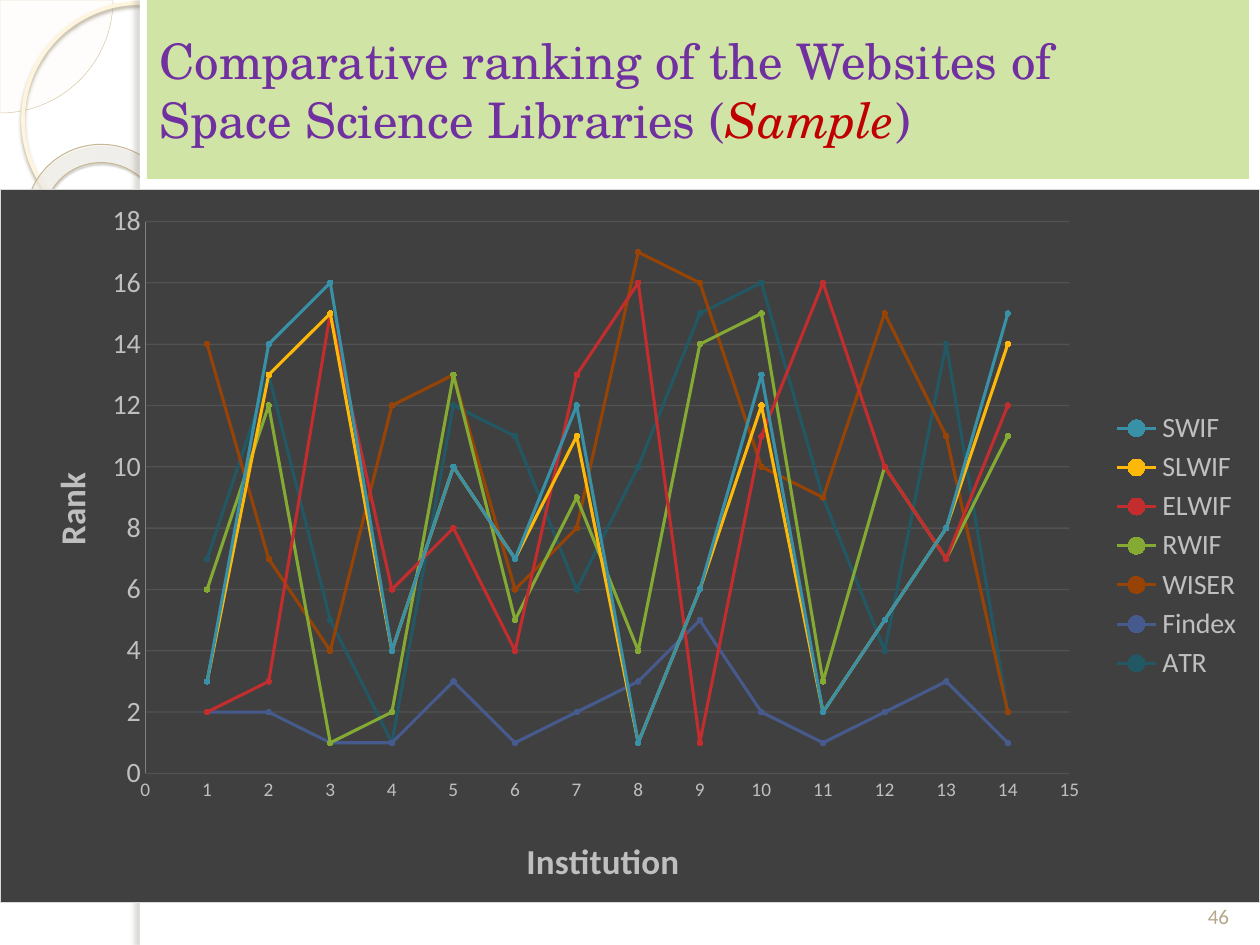
from lxml.etree import SubElement
from pptx import Presentation
from pptx.chart.data import XyChartData
from pptx.dml.color import RGBColor
from pptx.enum.chart import XL_CHART_TYPE, XL_LEGEND_POSITION, XL_MARKER_STYLE, XL_TICK_MARK
from pptx.enum.shapes import MSO_SHAPE
from pptx.enum.text import MSO_ANCHOR, PP_ALIGN
from pptx.oxml import parse_xml
from pptx.oxml.ns import nsdecls, qn
from pptx.util import Pt

EMU_PER_PX = 914400 / 126
CHART_BOX = (0, 189, 1260, 714)
GREY = "BFBFBF"

# name, line colour, marker colour, rank of institutions 1 to 14
RANKINGS = [
    ("SWIF", "3891A7", "7EC3D4", (3, 14, 16, 4, 10, 7, 12, 1, 6, 13, 2, 5, 8, 15)),
    ("SLWIF", "FEB80A", "FED46C", (3, 13, 15, 4, 10, 7, 11, 1, 6, 12, 2, 5, 8, 14)),
    ("ELWIF", "C32D2E", "E17B7C", (2, 3, 15, 6, 8, 4, 13, 16, 1, 11, 16, 10, 7, 12)),
    ("RWIF", "84AA33", "B9D77A", (6, 12, 1, 2, 13, 5, 9, 4, 14, 15, 3, 10, 7, 11)),
    ("WISER", "964305", "F88631", (14, 7, 4, 12, 13, 6, 8, 17, 16, 10, 9, 15, 11, 2)),
    ("Findex", "475A8D", "8898C3", (2, 2, 1, 1, 3, 1, 2, 3, 5, 2, 1, 2, 3, 1)),
    ("ATR", "225764", "56B0C6", (7, 13, 5, 1, 12, 11, 6, 10, 15, 16, 9, 4, 14, 2)),
]


def px(length):
    return round(length * EMU_PER_PX)


def rgb(value):
    return RGBColor.from_string(value)


def set_alpha(color_format_parent, percent):
    for color in color_format_parent.iter(qn("a:srgbClr")):
        SubElement(color, qn("a:alpha")).set("val", str(percent * 1000))


def style_line(line, color, width):
    line.color.rgb = rgb(color)
    line.width = Pt(width)


def style_font(font, size, color, name="Calibri", bold=False):
    font.size = Pt(size)
    font.name = name
    font.bold = bold
    font.color.rgb = rgb(color)


def add_shape(slide, kind, box, fill=None, line=None):
    shape = slide.shapes.add_shape(kind, *map(px, box))
    shape.shadow.inherit = False
    if fill:
        shape.fill.solid()
        shape.fill.fore_color.rgb = rgb(fill)
    else:
        shape.fill.background()
    if line:
        style_line(shape.line, *line)
    else:
        shape.line.fill.background()
    return shape


def add_shadow(shape, color, alpha, blur, distance, angle):
    effects = shape._element.spPr.find(qn("a:effectLst"))
    effects.append(parse_xml(
        f'<a:outerShdw {nsdecls("a")} blurRad="{Pt(blur)}" dist="{Pt(distance)}" '
        f'dir="{angle * 60000}" algn="tl" rotWithShape="0"><a:srgbClr val="{color}">'
        f'<a:alpha val="{alpha * 1000}"/></a:srgbClr></a:outerShdw>'))


def set_circular_gradient(shape, stops):
    shape.fill.background()
    stop_xml = "".join(
        f'<a:gs pos="{position * 1000}"><a:srgbClr val="{color}">'
        f'<a:alpha val="{alpha * 1000}"/></a:srgbClr></a:gs>'
        for position, color, alpha in stops)
    no_fill = shape._element.spPr.find(qn("a:noFill"))
    no_fill.addprevious(parse_xml(
        f'<a:gradFill {nsdecls("a")} rotWithShape="1"><a:gsLst>{stop_xml}</a:gsLst>'
        '<a:path path="circle"><a:fillToRect l="-408000" t="-50000" r="508000" b="150000"/>'
        '</a:path></a:gradFill>'))
    shape._element.spPr.remove(no_fill)


def add_decoration(slide):
    pie = add_shape(slide, MSO_SHAPE.PIE, (-113, -113, 226, 226), "FEFAF4", ("D3C39F", 0.25))
    pie.adjustments[0] = 0
    pie.adjustments[1] = 54
    set_alpha(pie._element.spPr.find(qn("a:solidFill")), 33)

    ring = add_shape(slide, MSO_SHAPE.OVAL, (23, 3, 234, 234), line=("FFF5DE", 2.15))
    add_shadow(ring, "B0A68F", 85, 2, 2, 90)

    donut = add_shape(slide, MSO_SHAPE.DONUT, (25, 145, 155, 152), line=("C7B893", 0.58))
    donut.adjustments[0] = 0.12
    donut.rotation = 38.6
    set_circular_gradient(donut, [(0, "FFFCF6", 70), (70, "FFFEFB", 55), (100, "F0D28E", 60)])
    add_shadow(donut, "5A5444", 35, 1, 1.2, 75)

    add_shape(slide, MSO_SHAPE.RECTANGLE, (140, 0, 1120, 945), "FFFFFF")
    edge = add_shape(slide, MSO_SHAPE.RECTANGLE, (140, 0, 10, 945), "FFFFFF")
    add_shadow(edge, "736F63", 25, 3, 3, 180)


def add_title(slide):
    title = add_shape(slide, MSO_SHAPE.RECTANGLE, (147, 0, 1102, 179), "D0E4A6")
    title.text_frame.word_wrap = True
    title.text_frame.vertical_anchor = MSO_ANCHOR.MIDDLE
    paragraph = title.text_frame.paragraphs[0]
    paragraph.alignment = PP_ALIGN.LEFT
    paragraph.text = "Comparative ranking of the Websites of\vSpace Science Libraries ("
    sample = paragraph.add_run()
    sample.text = "Sample"
    paragraph.add_run().text = ")"
    style_font(paragraph.font, 28, "7030A0", "TeX Gyre Schola")
    sample.font.italic = True
    sample.font.color.rgb = rgb("C00000")


def add_page_number(slide):
    box = slide.shapes.add_textbox(*map(px, (1187, 869, 63, 66)))
    box.text_frame.word_wrap = True
    box.text_frame.vertical_anchor = MSO_ANCHOR.BOTTOM
    paragraph = box.text_frame.paragraphs[0]
    paragraph.text = "46"
    paragraph.alignment = PP_ALIGN.CENTER
    style_font(paragraph.font, 12, "B5A788")


def set_layout(element, index, left, top, width=None, height=None):
    """Place a chart part, given in slide px, as fractions of the chart."""
    for old in element.findall(qn("c:layout")):
        element.remove(old)
    layout = parse_xml(f'<c:layout {nsdecls("c")}><c:manualLayout/></c:layout>')
    settings = [("xMode", "edge"), ("yMode", "edge"),
                ("x", (left - CHART_BOX[0]) / CHART_BOX[2]),
                ("y", (top - CHART_BOX[1]) / CHART_BOX[3])]
    if width:
        settings += [("w", width / CHART_BOX[2]), ("h", height / CHART_BOX[3])]
        if element.tag == qn("c:plotArea"):
            settings.insert(0, ("layoutTarget", "inner"))
    for name, value in settings:
        SubElement(layout[0], qn(f"c:{name}")).set("val", str(value))
    element.insert(index, layout)


def style_axis(axis, title, title_place, maximum, step, size):
    axis.minimum_scale = 0
    axis.maximum_scale = maximum
    axis.major_unit = step
    axis.major_tick_mark = axis.minor_tick_mark = XL_TICK_MARK.NONE
    style_font(axis.tick_labels.font, size, GREY)
    paragraph = axis.axis_title.text_frame.paragraphs[0]
    paragraph.text = title
    style_font(paragraph.font, 20, GREY, bold=True)
    set_layout(axis.axis_title._element, 1, *title_place)


def add_ranking_chart(slide):
    data = XyChartData()
    for name, _, _, ranks in RANKINGS:
        series = data.add_series(name)
        for institution, rank in enumerate(ranks, start=1):
            series.add_data_point(institution, rank)
    chart = slide.shapes.add_chart(XL_CHART_TYPE.XY_SCATTER_LINES, *map(px, CHART_BOX), data).chart
    chart.has_title = False
    style_font(chart.font, 10, "000000")
    chart.plots[0].vary_by_categories = False

    for series, (_, color, marker_color, _) in zip(chart.plots[0].series, RANKINGS):
        style_line(series.format.line, color, 1.75)
        series.marker.style = XL_MARKER_STYLE.CIRCLE
        series.marker.size = 3
        series.marker.format.fill.solid()
        series.marker.format.fill.fore_color.rgb = rgb(marker_color)
        series.marker.format.line.color.rgb = rgb(color)

    institutions, ranks = chart.category_axis, chart.value_axis
    style_axis(institutions, "Institution", (520, 830), 15, 1, 11)
    institutions.has_major_gridlines = False
    institutions.format.line.fill.background()
    style_axis(ranks, "Rank", (40, 466), 18, 2, 16)
    ranks.axis_title.text_frame._txBody.bodyPr.set("rot", "-5400000")
    style_line(ranks.format.line, "808080", 0.75)
    ranks.has_major_gridlines = True
    grid_line = ranks.major_gridlines.format.line
    style_line(grid_line, "595959", 0.75)
    set_alpha(ranks._element.find(qn("c:majorGridlines")), 75)

    chart.has_legend = True
    chart.legend.position = XL_LEGEND_POSITION.RIGHT
    chart.legend.include_in_layout = False
    style_font(chart.legend.font, 16, GREY)
    set_layout(chart.legend._element, 1, 1106, 406, 142, 280)

    chart_element = chart._chartSpace.find(qn("c:chart"))
    set_layout(chart_element.find(qn("c:plotArea")), 0, 145, 221, 925, 553)
    chart_element.addnext(parse_xml(
        f'<c:spPr {nsdecls("c", "a")}><a:solidFill><a:srgbClr val="404040"/></a:solidFill>'
        f'<a:ln w="{Pt(0.75)}"><a:solidFill><a:srgbClr val="D9D9D9"/></a:solidFill></a:ln></c:spPr>'))


def main():
    presentation = Presentation()
    presentation.slide_width = px(1260)
    presentation.slide_height = px(945)
    slide = presentation.slides.add_slide(presentation.slide_layouts[6])
    add_decoration(slide)
    add_title(slide)
    add_page_number(slide)
    add_ranking_chart(slide)
    presentation.save("out.pptx")


if __name__ == "__main__":
    main()
